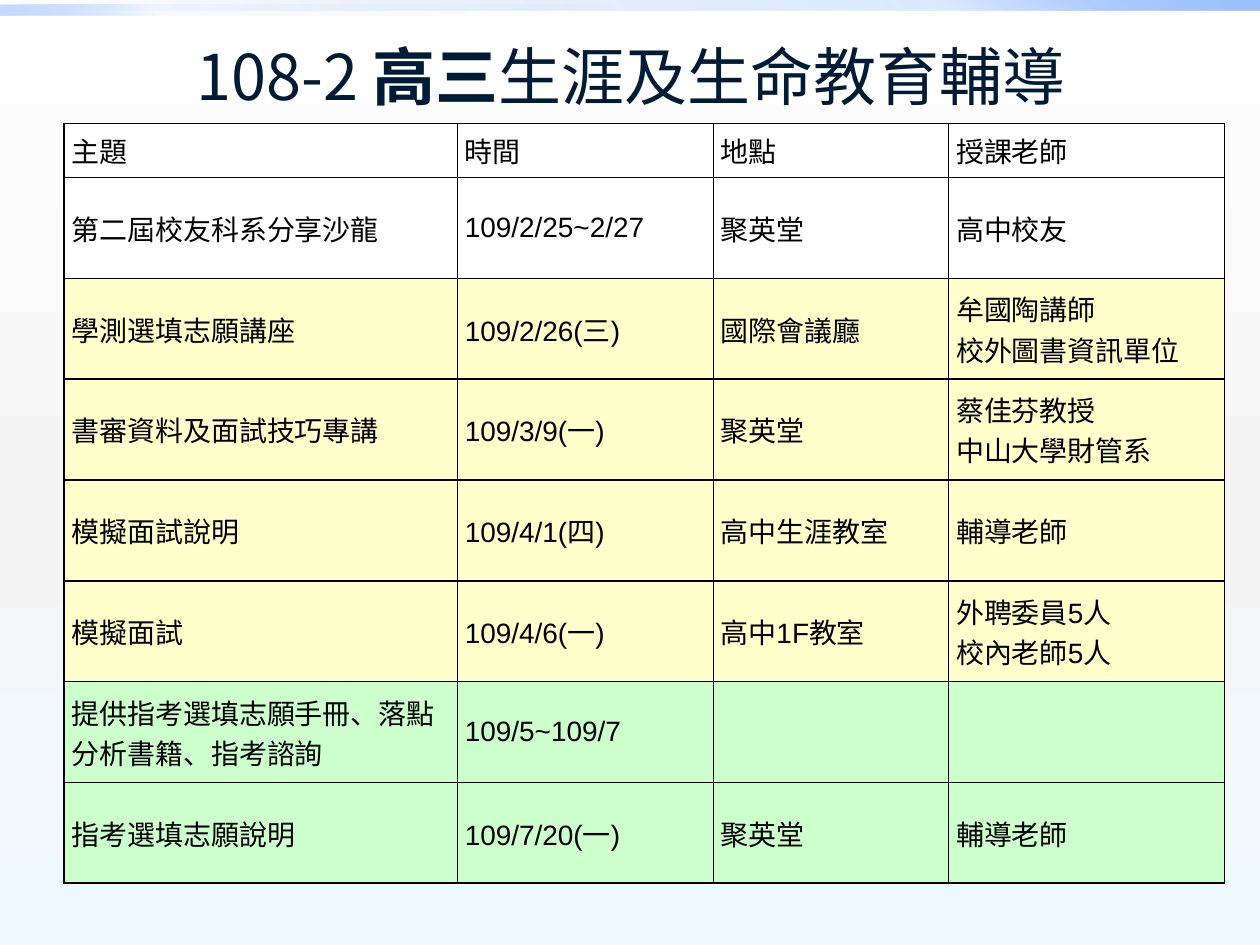
import pptx
import pptx.util
import pptx.dml.color
import pptx.enum.shapes
import pptx.enum.text
import pptx.oxml
import pptx.oxml.ns
from lxml import etree

Inches, Pt = pptx.util.Inches, pptx.util.Pt
RGB = pptx.dml.color.RGBColor.from_string
ALIGN = pptx.enum.text.PP_ALIGN
MIDDLE = pptx.enum.text.MSO_ANCHOR.MIDDLE
qn = pptx.oxml.ns.qn

COLORS = {"title": "001B36", "text": "000000", "border": "000000",
          "plain": "FFFFFF", "spring": "FFFFCC", "summer": "CCFFCC",
          "deep": "0058B7", "blue": "4F95FF", "light": "9EC2FF",
          "top": "FFFFFF", "middle": "F4F4F4", "bottom": "EEF9FF"}
TITLE_FONT, TABLE_FONT = "Noto Sans CJK SC", "Arial"

TITLE = [("108-2 ", False), ("高三", True), ("生涯及生命教育輔導", False)]
ROWS = [
    ("plain", ["主題", "時間", "地點", "授課老師"]),
    ("plain", ["第二屆校友科系分享沙龍", "109/2/25~2/27", "聚英堂", "高中校友"]),
    ("spring", ["學測選填志願講座", "109/2/26(三)", "國際會議廳", "牟國陶講師\n校外圖書資訊單位"]),
    ("spring", ["書審資料及面試技巧專講", "109/3/9(一)", "聚英堂", "蔡佳芬教授\n中山大學財管系"]),
    ("spring", ["模擬面試說明", "109/4/1(四)", "高中生涯教室", "輔導老師"]),
    ("spring", ["模擬面試", "109/4/6(一)", "高中1F教室", "外聘委員5人\n校內老師5人"]),
    ("summer", ["提供指考選填志願手冊、落點分析書籍、指考諮詢", "109/5~109/7", "", ""]),
    ("summer", ["指考選填志願說明", "109/7/20(一)", "聚英堂", "輔導老師"]),
]
JUSTIFIED = {"聚英堂", "高中生涯教室", "高中1F教室", "109/5~109/7", "109/7/20(一)"}
COL_WIDTHS = [3.12, 2.03, 1.87, 2.19]
HEADER_HEIGHT, ROW_HEIGHT = 0.43, 0.8

# left, top, width, height, angle, stops of (position %, colour, opacity %)
BANDS = [
    (0, 0, 10, 0.08, 315, [(0, "deep", 0), (75, "blue", 20), (100, "light", 100)]),
    (0, 0.04, 5, 0.08, 135, [(0, "deep", 0), (75, "blue", 5), (100, "light", 60)]),
]
BACKGROUND = [(0, "top", 100), (55, "middle", 100), (100, "bottom", 100)]


def set_gradient(fill, element, angle, stops):
    """Swap the first solid fill inside element for a linear gradient."""
    fill.solid()
    solid = element.find(".//" + qn("a:solidFill"))
    grad = etree.Element(qn("a:gradFill"), rotWithShape="1")
    gs_list = etree.SubElement(grad, qn("a:gsLst"))
    for pos, color, opacity in stops:
        gs = etree.SubElement(gs_list, qn("a:gs"), pos=str(pos * 1000))
        clr = etree.SubElement(gs, qn("a:srgbClr"), val=COLORS[color])
        if opacity < 100:
            etree.SubElement(clr, qn("a:alpha"), val=str(opacity * 1000))
    etree.SubElement(grad, qn("a:lin"), ang=str(angle * 60000), scaled="0")
    solid.getparent().replace(solid, grad)


def set_borders(cell, widths):
    tc_pr = cell._tc.get_or_add_tcPr()
    for i, (side, width) in enumerate(widths.items()):
        ln = etree.Element(qn("a:ln" + side), w=str(Pt(width)))
        fill = etree.SubElement(ln, qn("a:solidFill"))
        etree.SubElement(fill, qn("a:srgbClr"), val=COLORS["border"])
        tc_pr.insert(i, ln)


def format_run(r, font, size, color):
    r.font.name = font
    r.font.size = Pt(size)
    r.font.color.rgb = RGB(COLORS[color])


def add_title(s):
    sp = s.shapes.add_textbox(Inches(0.51), Inches(0.21), Inches(9), Inches(0.77))
    tf = sp.text_frame
    tf.word_wrap = True
    tf.vertical_anchor = MIDDLE
    p = tf.paragraphs[0]
    p.alignment = ALIGN.CENTER
    for text, bold in TITLE:
        r = p.add_run()
        r.text = text
        r.font.bold = bold
        format_run(r, TITLE_FONT, 36, "title")
        etree.SubElement(r.font._element, qn("a:ea"), typeface=TITLE_FONT)


def fill_cell(cell, text, color):
    cell.fill.solid()
    cell.fill.fore_color.rgb = RGB(COLORS[color])
    cell.vertical_anchor = MIDDLE
    cell.margin_left = cell.margin_right = Inches(0.06)
    cell.margin_top = cell.margin_bottom = Inches(0.04)
    cell.text_frame.text = text
    for p in cell.text_frame.paragraphs:
        p.alignment = ALIGN.JUSTIFY if text in JUSTIFIED else ALIGN.LEFT
        p.font.size = Pt(16)
        for r in p.runs:
            format_run(r, TABLE_FONT, 16, "text")


def add_schedule(s):
    heights = [HEADER_HEIGHT] + [ROW_HEIGHT] * (len(ROWS) - 1)
    last = len(COL_WIDTHS) - 1
    table = s.shapes.add_table(len(ROWS), len(COL_WIDTHS), Inches(0.51), Inches(0.98),
                               Inches(sum(COL_WIDTHS)), Inches(sum(heights))).table
    table.first_row = table.horz_banding = False
    for col, width in zip(table.columns, COL_WIDTHS):
        col.width = Inches(width)
    for row, height, (color, texts) in zip(table.rows, heights, ROWS):
        row.height = Inches(height)
        for c, (cell, text) in enumerate(zip(row.cells, texts)):
            fill_cell(cell, text, color)
            set_borders(cell, {"L": 1 if c == 0 else 0.75,
                               "R": 1 if c == last else 0.75, "T": 1, "B": 1})


def main():
    prs = pptx.Presentation()
    prs.slide_width, prs.slide_height = Inches(10), Inches(7.5)
    s = prs.slides.add_slide(prs.slide_layouts[6])
    set_gradient(s.background.fill, s._element, 90, BACKGROUND)
    for left, top, width, height, angle, stops in BANDS:
        sp = s.shapes.add_shape(pptx.enum.shapes.MSO_SHAPE.RECTANGLE, Inches(left),
                                Inches(top), Inches(width), Inches(height))
        sp.shadow.inherit = False
        sp.line.fill.background()
        set_gradient(sp.fill, sp._element, angle, stops)
    add_title(s)
    add_schedule(s)
    prs.save("out.pptx")


if __name__ == "__main__":
    main()
